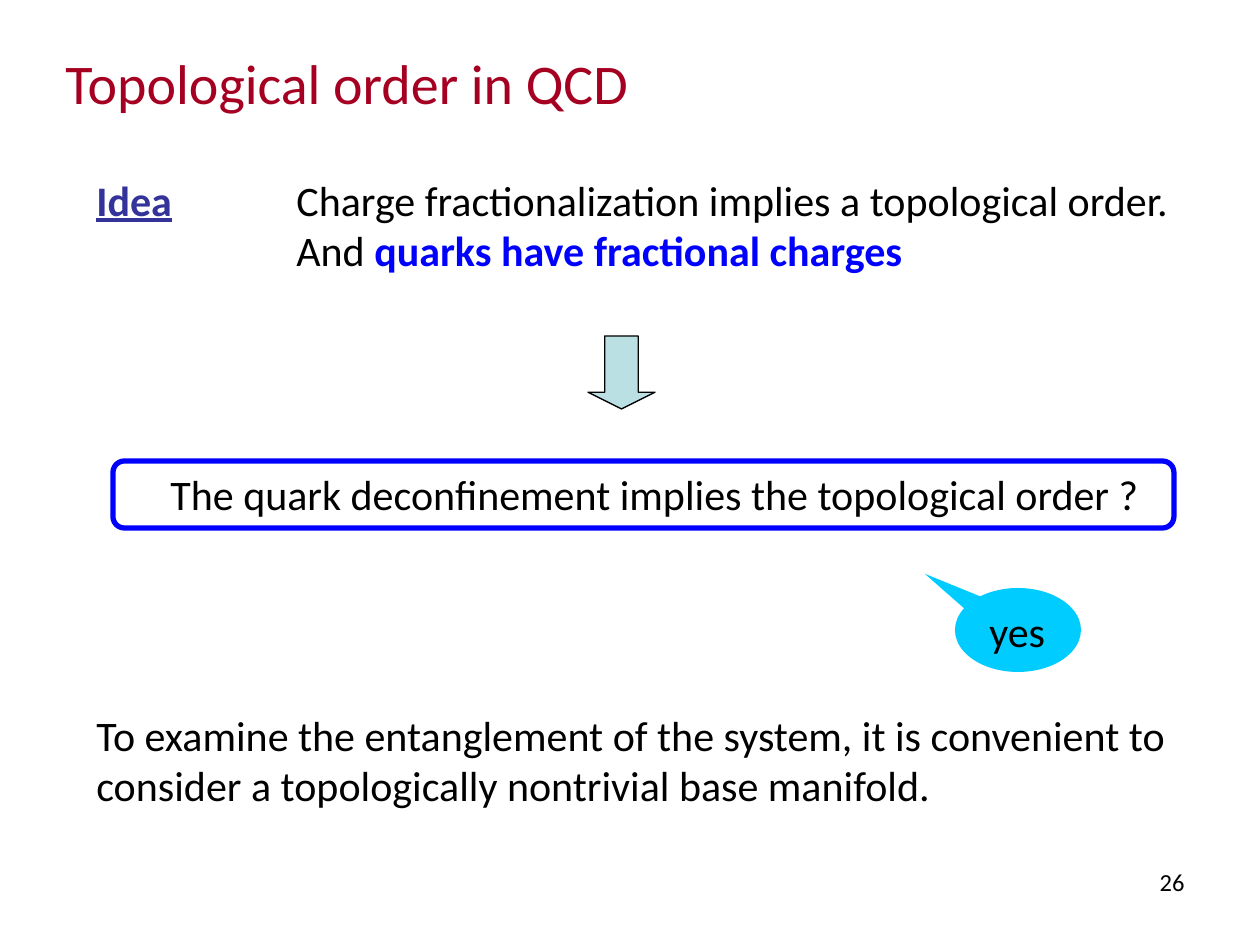
from pptx import Presentation
from pptx.dml.color import RGBColor
from pptx.enum.shapes import MSO_SHAPE
from pptx.enum.text import MSO_ANCHOR, PP_ALIGN
from pptx.util import Emu, Pt

EMU_PER_PX = 914400 / 126
BLACK = RGBColor(0x00, 0x00, 0x00)
CRIMSON = RGBColor(0xA5, 0x00, 0x21)
INDIGO = RGBColor(0x33, 0x33, 0x99)
BLUE = RGBColor(0x00, 0x00, 0xFF)
PALE_TEAL = RGBColor(0xBB, 0xE0, 0xE3)
CYAN = RGBColor(0x00, 0xCC, 0xFF)
DOWN_ARROW = MSO_SHAPE.DOWN_ARROW
ROUNDED_FRAME = MSO_SHAPE.ROUNDED_RECTANGLE
CALLOUT = MSO_SHAPE.OVAL_CALLOUT
LEFT, RIGHT = PP_ALIGN.LEFT, PP_ALIGN.RIGHT
TOP = MSO_ANCHOR.TOP


def px(*lengths):
    return [Emu(round(length * EMU_PER_PX)) for length in lengths]


class SlideBuilder:
    font_name = "Calibri"
    body_size = 24

    def __init__(self, page):
        self.page = page

    def text(self, place, words, size=body_size, color=BLACK, align=LEFT,
             wrap=True, bold=None, underline=None, emphasis=None):
        box = self.page.shapes.add_textbox(*px(*place))
        frame = box.text_frame
        frame.word_wrap = wrap
        frame.vertical_anchor = TOP
        para = frame.paragraphs[0]
        para.alignment = align
        para.font.name = self.font_name
        para.font.size = Pt(size)
        para.font.bold = bold
        para.font.underline = underline
        para.font.color.rgb = color
        para.add_run().text = words
        if emphasis:
            span = para.add_run()
            span.text = emphasis
            span.font.bold = True
            span.font.color.rgb = BLUE
        return box

    def shape(self, kind, place, adjustments, fill=None, line=None, width=0.75):
        shape = self.page.shapes.add_shape(kind, *px(*place))
        shape.shadow.inherit = False
        for index, value in enumerate(adjustments):
            shape.adjustments[index] = value
        if fill is None:
            shape.fill.background()
        else:
            shape.fill.solid()
            shape.fill.fore_color.rgb = fill
        if line is None:
            shape.line.fill.background()
        else:
            shape.line.color.rgb = line
            shape.line.width = Pt(width)
        return shape

    def group(self, *members):
        return self.page.shapes.add_group_shape(members)


def main():
    deck = Presentation()
    deck.slide_width, deck.slide_height = px(1260, 945)
    slide = SlideBuilder(deck.slides.add_slide(deck.slide_layouts[6]))

    slide.text((903, 861, 294, 66), "26", size=14, align=RIGHT)
    slide.text((53, 42, 1042, 81), "Topological order in QCD", size=32, color=CRIMSON)
    slide.text((84, 168, 102, 64), "Idea", color=INDIGO, wrap=False,
               bold=True, underline=True)
    slide.text((284, 168, 903, 115),
               "Charge fractionalization implies a topological order. And ",
               emphasis="quarks have fractional charges")
    slide.shape(DOWN_ARROW, (588, 336, 67, 73), (0.5, 0.25), PALE_TEAL, BLACK)
    slide.text((158, 462, 1012, 64),
               "The quark deconfinement implies the topological order ?", wrap=False)
    slide.text((84, 703, 1113, 115),
               "To examine the entanglement of the system, it is convenient to "
               "consider a topologically nontrivial base manifold.")
    slide.shape(ROUNDED_FRAME, (113, 461, 1061, 67), (0.17,), line=BLUE, width=3)
    bubble = slide.shape(CALLOUT, (955, 588, 126, 84), (-0.74, -0.67), CYAN)
    answer = slide.text((977, 599, 82, 64), "yes", wrap=False)
    slide.group(bubble, answer)

    deck.save("out.pptx")


if __name__ == "__main__":
    main()
